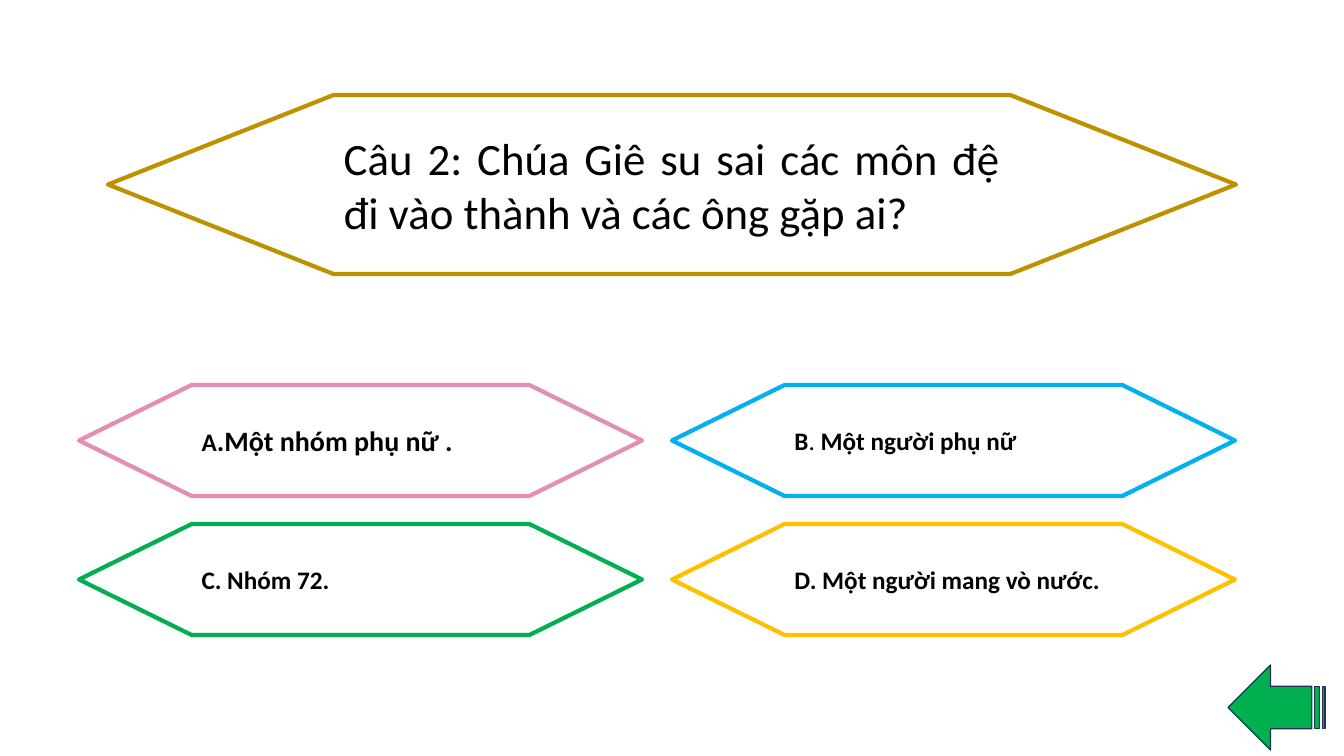
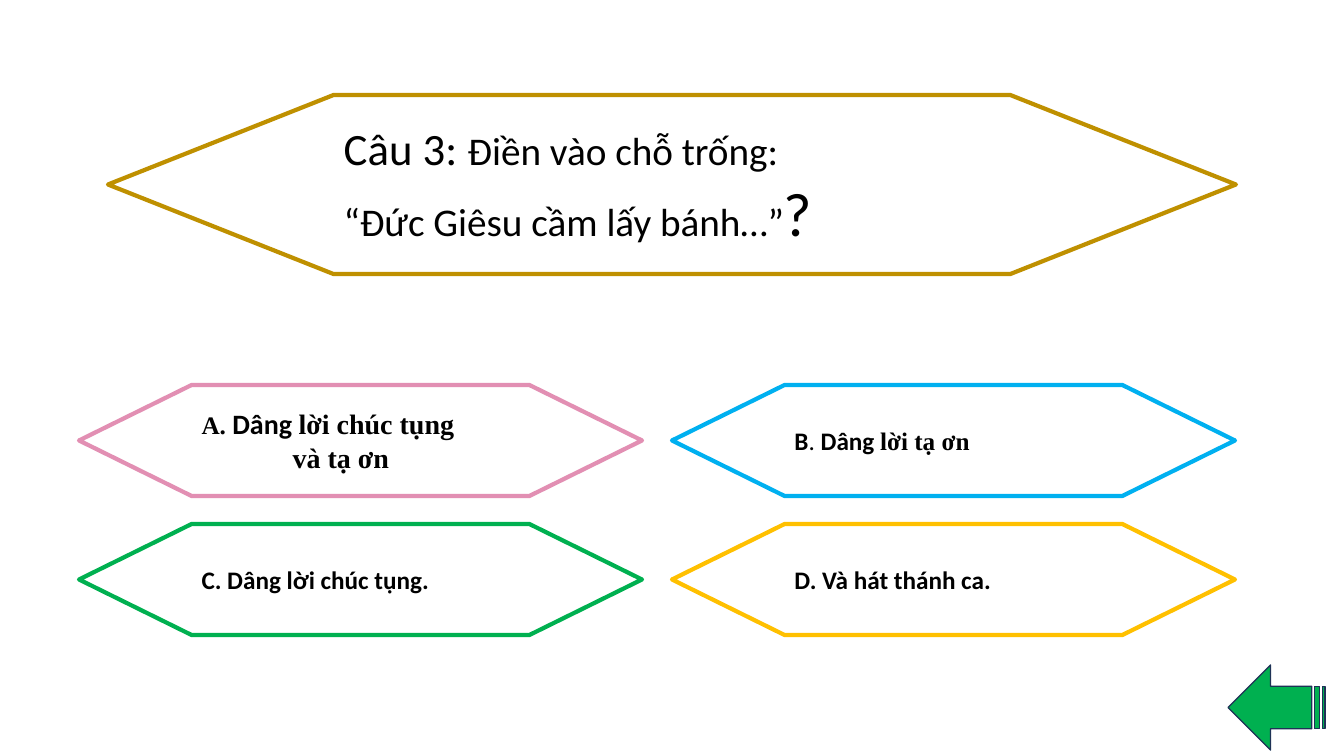
from pptx import Presentation
from pptx.dml.color import RGBColor
from pptx.enum.shapes import MSO_SHAPE
from pptx.enum.text import MSO_ANCHOR, MSO_AUTO_SIZE, PP_ALIGN
from pptx.util import Pt

HEXAGON = MSO_SHAPE.FLOWCHART_PREPARATION
STRIPED_ARROW = MSO_SHAPE.STRIPED_RIGHT_ARROW
MIDDLE = MSO_ANCHOR.MIDDLE
JUSTIFY = PP_ALIGN.JUSTIFY
NO_FIT = MSO_AUTO_SIZE.NONE

EMU_PER_PX = 12192000 / 1344
SANS, SERIF = "Calibri", "Times New Roman"
BLACK, GOLD, GREEN, NAVY = "000000", "BF9000", "00B050", "1E3256"
ANSWER_COLOURS = ["E28FB3", "00B0F0", GREEN, "FFC000"]


def px(length):
    return round(length * EMU_PER_PX)


def colour(value):
    return RGBColor.from_string(value)


def run(text, size=18, bold=True, font=SANS):
    return text, size, bold, font


class Quiz:
    question_box = (108, 95, 1128, 179)
    answer_left, answer_top = 79, 385
    answer_width, answer_height = 563, 111
    column_step, row_step = 593, 139
    back_box = (1228, 665, 97, 85)
    outline = 3

    def __init__(self):
        self.deck = Presentation()
        self.deck.slide_width, self.deck.slide_height = px(1344), px(756)
        self.slide = None

    def shape(self, kind, box, line, width, fill=None):
        shape = self.slide.shapes.add_shape(kind, *map(px, box))
        shape.shadow.inherit = False
        if fill:
            shape.fill.solid()
            shape.fill.fore_color.rgb = colour(fill)
        else:
            shape.fill.background()
        shape.line.color.rgb = colour(line)
        shape.line.width = Pt(width)
        return shape

    def set_lines(self, frame, lines, hanging=0):
        frame.word_wrap = True
        frame.auto_size = NO_FIT
        frame.vertical_anchor = MIDDLE
        for index, runs in enumerate(lines):
            paragraph = frame.add_paragraph() if index else frame.paragraphs[0]
            paragraph.alignment = JUSTIFY
            if index and hanging:
                paragraph._p.get_or_add_pPr().set("marL", str(px(hanging)))
            for text, size, bold, font in runs:
                part = paragraph.add_run()
                part.text = text
                part.font.size = Pt(size)
                part.font.bold = bold
                part.font.name = font
                part.font.color.rgb = colour(BLACK)

    def question(self, lines):
        left, top, width, height = self.question_box
        self.shape(HEXAGON, self.question_box, GOLD, self.outline)
        title = self.slide.shapes.title
        title.left, title.top = px(left + width / 5), px(top)
        title.width, title.height = px(width * 3 / 5), px(height)
        self.set_lines(title.text_frame, lines)

    def answers(self, options):
        for index, (lines, line) in enumerate(zip(options, ANSWER_COLOURS)):
            row, column = divmod(index, 2)
            box = (self.answer_left + column * self.column_step,
                   self.answer_top + row * self.row_step,
                   self.answer_width, self.answer_height)
            answer = self.shape(HEXAGON, box, line, self.outline)
            self.set_lines(answer.text_frame, lines, hanging=91)

    def back_arrow(self):
        arrow = self.shape(STRIPED_ARROW, self.back_box, NAVY, 1, GREEN)
        arrow.rotation = 180

    def page(self, question, options):
        self.slide = self.deck.slides.add_slide(self.deck.slide_layouts[5])
        self.question(question)
        self.answers(options)
        self.back_arrow()


def main():
    quiz = Quiz()
    quiz.page(
        [[run("Câu 2: Chúa Giê su sai các môn đệ đi vào thành và các ông gặp ai?",
              32, False)]],
        [
            [[run("A"), run(".Một nhóm phụ nữ .", 20)]],
            [[run("B"), run(". ", bold=False), run("Một người phụ nữ")]],
            [[run("C. Nhóm 72.")]],
            [[run("D. Một người mang vò nước.")]],
        ])
    quiz.page(
        [
            [run("Câu 3: ", 32, False), run("Điền vào chỗ trống:", 28, False)],
            [run("“Đức Giêsu cầm lấy bánh…”", 28, False), run("?", 44, False)],
        ],
        [
            [[run("A. ", font=SERIF), run("Dâng ", 20),
              run("lời chúc tụng", 20, font=SERIF)],
             [run("và tạ ơn", 20, font=SERIF)]],
            [[run("B"), run(". ", bold=False), run("Dâng "),
              run("lời tạ ơn", font=SERIF)]],
            [[run("C. Dâng lời chúc tụng.")]],
            [[run("D. Và hát thánh ca.")]],
        ])
    quiz.deck.save("out.pptx")


if __name__ == "__main__":
    main()
